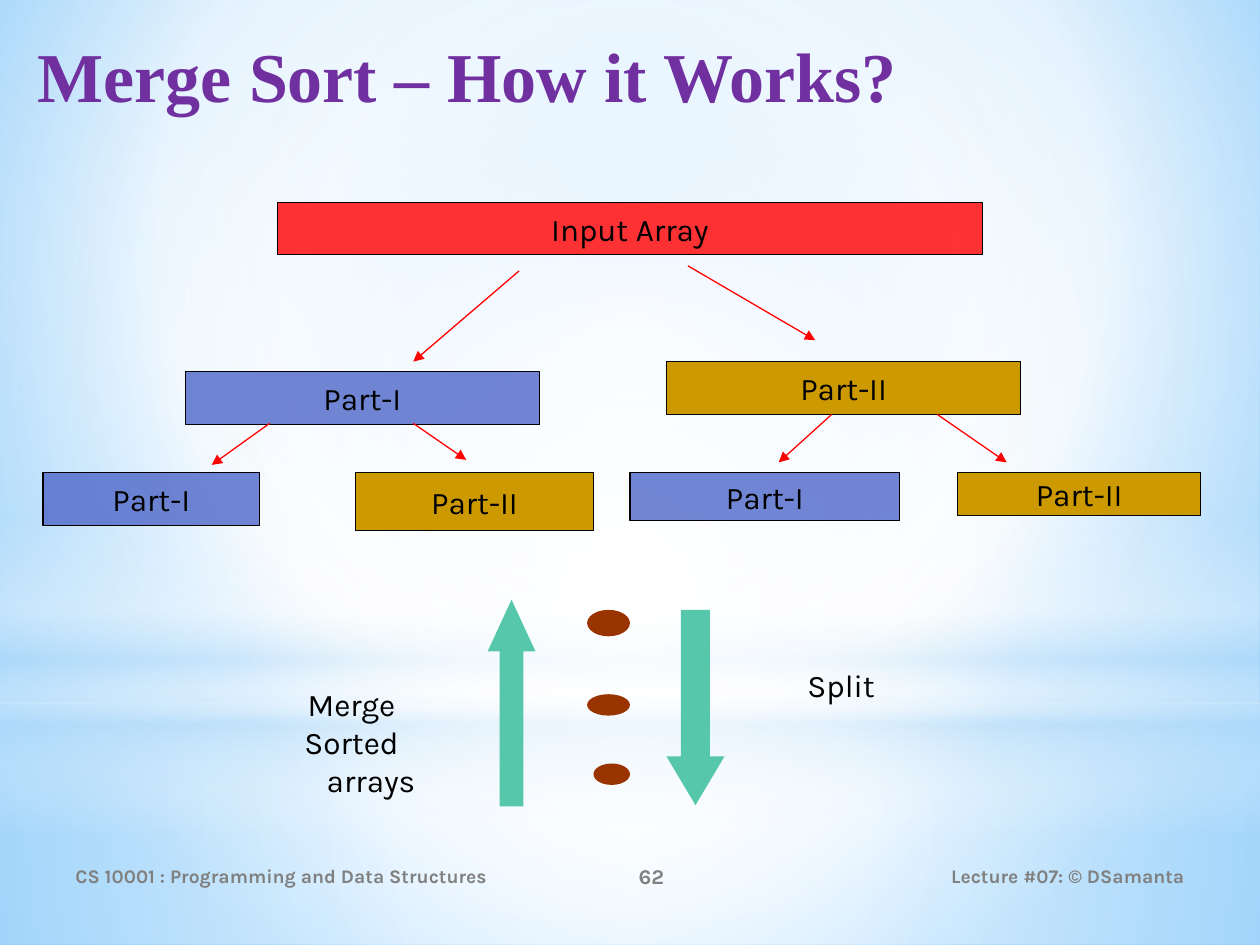
from dataclasses import dataclass
from typing import Optional

from lxml.etree import SubElement
from pptx import Presentation
from pptx.dml.color import RGBColor
from pptx.enum.shapes import MSO_CONNECTOR, MSO_SHAPE
from pptx.enum.text import MSO_ANCHOR, PP_ALIGN
from pptx.oxml.ns import qn
from pptx.util import Inches, Pt

COLUMNS, ROWS = 100, 75
CELL = Inches(0.1)

WHITE = RGBColor(0xFF, 0xFF, 0xFF)
BLACK = RGBColor(0x00, 0x00, 0x00)
GREY = RGBColor(0x80, 0x80, 0x80)
PURPLE = RGBColor(0x70, 0x30, 0xA0)
RED = RGBColor(0xFF, 0x00, 0x00)
BLUE = RGBColor(0x4E, 0x67, 0xC8)
GOLD = RGBColor(0xCC, 0x99, 0x00)
BROWN = RGBColor(0x99, 0x33, 0x00)
TEAL = RGBColor(0x56, 0xC7, 0xAA)
HAZE = RGBColor(0xB4, 0xDC, 0xFA)
SKY = RGBColor(0x9E, 0xD5, 0xFF)
DEEP_SKY = RGBColor(0x5B, 0xB9, 0xFF)


@dataclass(frozen=True)
class Area:
    left: float
    top: float
    width: float
    height: float

    def lengths(self):
        return [round(value * CELL) for value in (self.left, self.top, self.width, self.height)]


@dataclass(frozen=True)
class Stop:
    position: int
    color: RGBColor
    opacity: int = 100


@dataclass(frozen=True)
class Gradient:
    stops: tuple[Stop, ...]
    focus: Optional[tuple[int, int, int, int]] = (50, 50, 50, 50)


@dataclass(frozen=True)
class Part:
    label: str
    area: Area
    color: RGBColor
    opacity: int = 100


@dataclass(frozen=True)
class Arrow:
    start: tuple[float, float]
    end: tuple[float, float]


@dataclass(frozen=True)
class Figure:
    kind: MSO_SHAPE
    area: Area
    color: RGBColor
    adjustments: tuple[float, ...] = ()


@dataclass(frozen=True)
class Caption:
    lines: tuple[str, ...]
    area: Area
    size: int = 18
    color: RGBColor = BLACK
    font: str = "Karla"
    bold: bool = False
    align: PP_ALIGN = PP_ALIGN.LEFT
    anchor: MSO_ANCHOR = MSO_ANCHOR.TOP
    hanging: bool = False


BACKDROP = Gradient((Stop(0, SKY), Stop(60, WHITE), Stop(100, DEEP_SKY)), (20, 10, 20, 60))
LAYERS = [
    (MSO_SHAPE.RECTANGLE, Area(0, 55.8, COLUMNS, 19.2),
     Gradient((Stop(0, WHITE, 91), Stop(37, WHITE, 76), Stop(100, HAZE, 79)))),
    (MSO_SHAPE.RECTANGLE, Area(0, 0, COLUMNS, 55.8),
     Gradient((Stop(0, WHITE, 89), Stop(48, WHITE, 62), Stop(100, HAZE, 79)))),
    (MSO_SHAPE.RECTANGLE, Area(0, 41.2, COLUMNS, 25),
     Gradient((Stop(0, WHITE, 0), Stop(29, WHITE, 30), Stop(45, HAZE, 40),
               Stop(55, WHITE, 26), Stop(65, HAZE, 60), Stop(100, WHITE, 0)), None)),
    (MSO_SHAPE.OVAL, Area(0, 17.5, COLUMNS, 55.8),
     Gradient((Stop(0, WHITE), Stop(56, WHITE, 0)))),
]
PARTS = [
    Part("Input Array", Area(22, 16.1, 56, 4.1), RED, 80),
    Part("Part-I", Area(14.7, 29.5, 28.1, 4.2), BLUE, 80),
    Part("Part-II", Area(52.9, 28.7, 28.1, 4.2), GOLD),
    Part("Part-I", Area(50, 37.5, 21.4, 3.8), BLUE, 80),
    Part("Part-II", Area(76, 37.5, 19.3, 3.4), GOLD),
    Part("Part-I", Area(3.4, 37.5, 17.2, 4.2), BLUE, 80),
    Part("Part-II", Area(28.2, 37.5, 18.9, 4.6), GOLD),
]
ARROWS = [
    Arrow((41.2, 21.5), (32.8, 28.7)),
    Arrow((54.6, 21.1), (64.7, 27)),
    Arrow((66, 32.9), (61.8, 36.7)),
    Arrow((74.4, 32.9), (79.9, 36.7)),
    Arrow((21.4, 33.6), (16.8, 36.9)),
    Arrow((32.8, 33.6), (37, 36.5)),
]
FIGURES = [
    Figure(MSO_SHAPE.OVAL, Area(46.6, 48.4, 3.4, 2.1), BROWN),
    Figure(MSO_SHAPE.OVAL, Area(46.6, 55.1, 3.4, 1.7), BROWN),
    Figure(MSO_SHAPE.OVAL, Area(47.1, 60.6, 2.9, 1.7), BROWN),
    Figure(MSO_SHAPE.DOWN_ARROW, Area(52.9, 48.4, 4.6, 15.5), TEAL, (0.5, 0.84)),
    Figure(MSO_SHAPE.UP_ARROW, Area(38.7, 47.6, 3.8, 16.4), TEAL, (0.5, 1.08)),
]
CAPTIONS = [
    Caption(("Merge Sort – How it Works?",), Area(2, 2.1, 95.3, 10.2), 40, PURPLE,
            "Times New Roman", True),
    Caption(("CS 10001 : Programming and Data Structures",), Area(5, 67.5, 36.7, 4), 11, GREY,
            bold=True, anchor=MSO_ANCHOR.MIDDLE),
    Caption(("62",), Area(41.7, 67.5, 20, 4), 12, GREY, bold=True,
            align=PP_ALIGN.CENTER, anchor=MSO_ANCHOR.MIDDLE),
    Caption(("Lecture #07: © DSamanta",), Area(67.5, 67.5, 27.5, 4), 11, GREY, bold=True,
            align=PP_ALIGN.RIGHT, anchor=MSO_ANCHOR.MIDDLE),
    Caption(("Split",), Area(58.1, 52.4, 13.3, 5), hanging=True),
    Caption(("Merge", "Sorted arrays"), Area(14.4, 53.9, 22, 7.1),
            align=PP_ALIGN.CENTER, hanging=True),
]


def add_color(parent, color: RGBColor, opacity: int) -> None:
    """Append a colour with its opacity to a fill or gradient stop."""
    node = SubElement(parent, qn("a:srgbClr"), val=str(color))
    if opacity < 100:
        SubElement(node, qn("a:alpha"), val=str(opacity * 1000))


def apply_gradient(solid, gradient: Gradient) -> None:
    """Replace a solid fill element by a gradient."""
    fill = solid.makeelement(qn("a:gradFill"), {"rotWithShape": "1"})
    stops = SubElement(fill, qn("a:gsLst"))
    for stop in gradient.stops:
        add_color(SubElement(stops, qn("a:gs"), pos=str(stop.position * 1000)),
                  stop.color, stop.opacity)
    if gradient.focus:
        route = SubElement(fill, qn("a:path"), {"path": "circle"})
        sides = {side: str(share * 1000) for side, share in zip("ltrb", gradient.focus)}
        SubElement(route, qn("a:fillToRect"), sides)
    else:
        SubElement(fill, qn("a:lin"), ang="5400000", scaled="0")
    solid.getparent().replace(solid, fill)


def add_figure(page, figure: Figure):
    """Draw a filled shape without outline or shadow."""
    shape = page.shapes.add_shape(figure.kind, *figure.area.lengths())
    shape.shadow.inherit = False
    shape.fill.solid()
    shape.fill.fore_color.rgb = figure.color
    shape.line.fill.background()
    for index, value in enumerate(figure.adjustments):
        shape.adjustments[index] = value
    return shape


def write(paragraph, text: str, size: int, color: RGBColor, font: str, align: PP_ALIGN) -> None:
    """Fill a paragraph with evenly styled text."""
    paragraph.text = text
    paragraph.alignment = align
    paragraph.font.size = Pt(size)
    paragraph.font.name = font
    paragraph.font.color.rgb = color


def add_part(page, part: Part) -> None:
    """Draw a labelled, outlined array part."""
    box = add_figure(page, Figure(MSO_SHAPE.RECTANGLE, part.area, part.color))
    solid = box.element.spPr.find(qn("a:solidFill"))
    solid.clear()
    add_color(solid, part.color, part.opacity)
    box.line.color.rgb = BLACK
    box.line.width = Pt(0.75)
    box.text_frame.word_wrap = False
    box.text_frame.vertical_anchor = MSO_ANCHOR.MIDDLE
    write(box.text_frame.paragraphs[0], part.label, 18, BLACK, "Karla", PP_ALIGN.CENTER)


def add_arrow(page, arrow: Arrow) -> None:
    """Draw a thin red line that ends in an arrowhead."""
    points = [round(value * CELL) for value in (*arrow.start, *arrow.end)]
    line = page.shapes.add_connector(MSO_CONNECTOR.STRAIGHT, *points)
    line.line.color.rgb = RED
    line.line.width = Pt(0.75)
    SubElement(line.line._get_or_add_ln(), qn("a:tailEnd"), type="triangle")
    SubElement(line.element.spPr, qn("a:effectLst"))


def add_caption(page, caption: Caption) -> None:
    """Write free text, one paragraph a line."""
    frame = page.shapes.add_textbox(*caption.area.lengths()).text_frame
    frame.word_wrap = True
    frame.vertical_anchor = caption.anchor
    for index, text in enumerate(caption.lines):
        paragraph = frame.add_paragraph() if index else frame.paragraphs[0]
        write(paragraph, text, caption.size, caption.color, caption.font, caption.align)
        paragraph.font.bold = caption.bold
        if caption.hanging:
            properties = paragraph._p.get_or_add_pPr()
            properties.set("marL", str(Inches(0.81)))
            properties.set("indent", str(Inches(-0.31)))


def main() -> None:
    """Build the merge sort slide."""
    deck = Presentation()
    deck.slide_width, deck.slide_height = COLUMNS * CELL, ROWS * CELL
    page = deck.slides.add_slide(deck.slide_layouts[6])
    page.background.fill.solid()
    apply_gradient(page.element.xpath(".//p:bgPr/a:solidFill")[0], BACKDROP)
    for kind, area, gradient in LAYERS:
        layer = add_figure(page, Figure(kind, area, WHITE))
        apply_gradient(layer.element.spPr.find(qn("a:solidFill")), gradient)
    for draw, items in ((add_part, PARTS), (add_arrow, ARROWS),
                        (add_figure, FIGURES), (add_caption, CAPTIONS)):
        for item in items:
            draw(page, item)
    deck.save("out.pptx")


if __name__ == "__main__":
    main()
